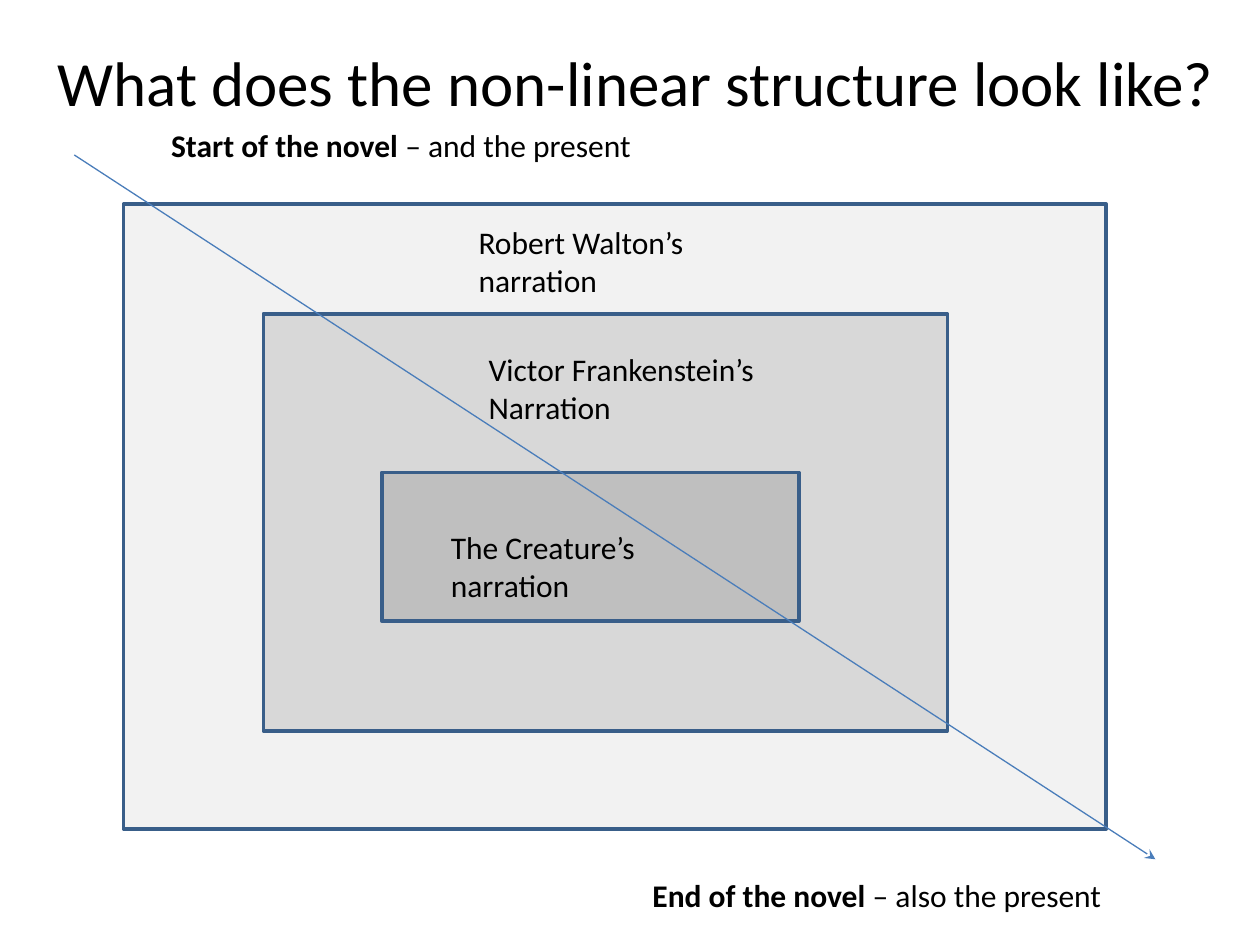
"""Build a slide of nested narrations crossed by the arrow of the novel."""
import collections

import pptx
import pptx.dml.color
import pptx.enum.shapes
import pptx.enum.text
import pptx.oxml
import pptx.oxml.ns
import pptx.util

RGBColor = pptx.dml.color.RGBColor
BLACK = RGBColor(0x00, 0x00, 0x00)
FRAME_BLUE = RGBColor(0x39, 0x5E, 0x89)
ARROW_BLUE = RGBColor(0x4A, 0x7D, 0xBA)
LIGHT_GREY = RGBColor(0xF2, 0xF2, 0xF2)
MIDDLE_GREY = RGBColor(0xD8, 0xD8, 0xD8)
DARK_GREY = RGBColor(0xBF, 0xBF, 0xBF)

FONT = "Calibri"
SLIDE_WIDTH = pptx.util.Inches(10)
SLIDE_HEIGHT = pptx.util.Inches(7.5)
COLUMN = SLIDE_WIDTH / 100
ROW = SLIDE_HEIGHT / 75
LABEL_ROWS = 7.1
CAPTION_ROWS = 4

Box = collections.namedtuple("Box", "left top width height")
Narration = collections.namedtuple("Narration", "text fill frame label")

NARRATIONS = [
    Narration("Robert Walton’s narration", LIGHT_GREY,
              Box(0, 0, 78, 49.6), Box(27.2, 1, 27.6, LABEL_ROWS)),
    Narration("Victor Frankenstein’s Narration", MIDDLE_GREY,
              Box(11.1, 8.7, 54.3, 33.1), Box(28, 11.1, 24.4, LABEL_ROWS)),
    Narration("The Creature’s narration", DARK_GREY,
              Box(20.5, 21.3, 33.1, 11.8), Box(25, 25.2, 18.1, LABEL_ROWS)),
]


def inside(outer, inner):
    """Move a box given relative to an outer box onto the slide grid."""
    return Box(outer.left + inner.left, outer.top + inner.top, inner.width, inner.height)


def to_lengths(box):
    """Turn columns and rows into slide lengths."""
    return (round(box.left * COLUMN), round(box.top * ROW),
            round(box.width * COLUMN), round(box.height * ROW))


def write_text(paragraph, text, size=18, bold=False, color=BLACK):
    """Add one formatted run to a paragraph."""
    run = paragraph.add_run()
    run.text = text
    run.font.name = FONT
    run.font.size = pptx.util.Pt(size)
    run.font.bold = bold
    run.font.color.rgb = color


def add_text_box(slide, box):
    """Add a wrapping text box and return its first paragraph."""
    text_frame = slide.shapes.add_textbox(*to_lengths(box)).text_frame
    text_frame.word_wrap = True
    text_frame.auto_size = pptx.enum.text.MSO_AUTO_SIZE.SHAPE_TO_FIT_TEXT
    return text_frame.paragraphs[0]


def place_title(slide, box):
    """Fill and place the title placeholder."""
    title = slide.shapes.title
    title.left, title.top, title.width, title.height = to_lengths(box)
    title.text_frame.auto_size = pptx.enum.text.MSO_AUTO_SIZE.NONE
    title.text_frame.vertical_anchor = pptx.enum.text.MSO_ANCHOR.MIDDLE
    paragraph = title.text_frame.paragraphs[0]
    paragraph.alignment = pptx.enum.text.PP_ALIGN.CENTER
    write_text(paragraph, "What does the non-linear structure look like?", size=36)


def place_narrations(slide, box):
    """Draw the nested frames, then their labels."""
    for narration in NARRATIONS:
        frame = slide.shapes.add_shape(pptx.enum.shapes.MSO_SHAPE.RECTANGLE,
                                       *to_lengths(inside(box, narration.frame)))
        frame.shadow.inherit = False
        frame.fill.solid()
        frame.fill.fore_color.rgb = narration.fill
        frame.line.color.rgb = FRAME_BLUE
        frame.line.width = pptx.util.Pt(2)
    for narration in NARRATIONS:
        write_text(add_text_box(slide, inside(box, narration.label)), narration.text)


def place_arrow(slide, box):
    """Draw the arrow from the top left to the bottom right of a box."""
    left, top, width, height = to_lengths(box)
    arrow = slide.shapes.add_connector(pptx.enum.shapes.MSO_CONNECTOR.STRAIGHT,
                                       left, top, left + width, top + height)
    arrow.line.color.rgb = ARROW_BLUE
    arrow.line.width = pptx.util.Pt(0.75)
    line = arrow.line._get_or_add_ln()
    line.append(pptx.oxml.parse_xml(
        f'<a:tailEnd {pptx.oxml.ns.nsdecls("a")} type="stealth"/>'))
    arrow._element.spPr.append(pptx.oxml.parse_xml(
        f'<a:effectLst {pptx.oxml.ns.nsdecls("a")}/>'))


def place_caption(slide, box, moment, time):
    """Write a bold moment followed by its time."""
    paragraph = add_text_box(slide, box)
    write_text(paragraph, moment, bold=True)
    write_text(paragraph, time)


def place_timeline(slide, box):
    """Draw the arrow with captions at its start and end."""
    place_arrow(slide, box)
    place_caption(slide, inside(box, Box(6.7, -2.8, 47.6, CAPTION_ROWS)),
                  "Start of the novel ", "– and the present")
    place_caption(slide, inside(box, Box(44.9, 56.7, 40.9, CAPTION_ROWS)),
                  "End of the novel ", "– also the present")


def main():
    """Build and save the presentation."""
    presentation = pptx.Presentation()
    presentation.slide_width = SLIDE_WIDTH
    presentation.slide_height = SLIDE_HEIGHT
    slide = presentation.slides.add_slide(presentation.slide_layouts.get_by_name("Title Only"))
    place_title(slide, Box(2, 3, 96.9, 6.9))
    place_narrations(slide, Box(9.8, 16.2, 78, 49.6))
    place_timeline(slide, Box(5.9, 12.3, 85.8, 55.9))
    presentation.save("out.pptx")


if __name__ == "__main__":
    main()
